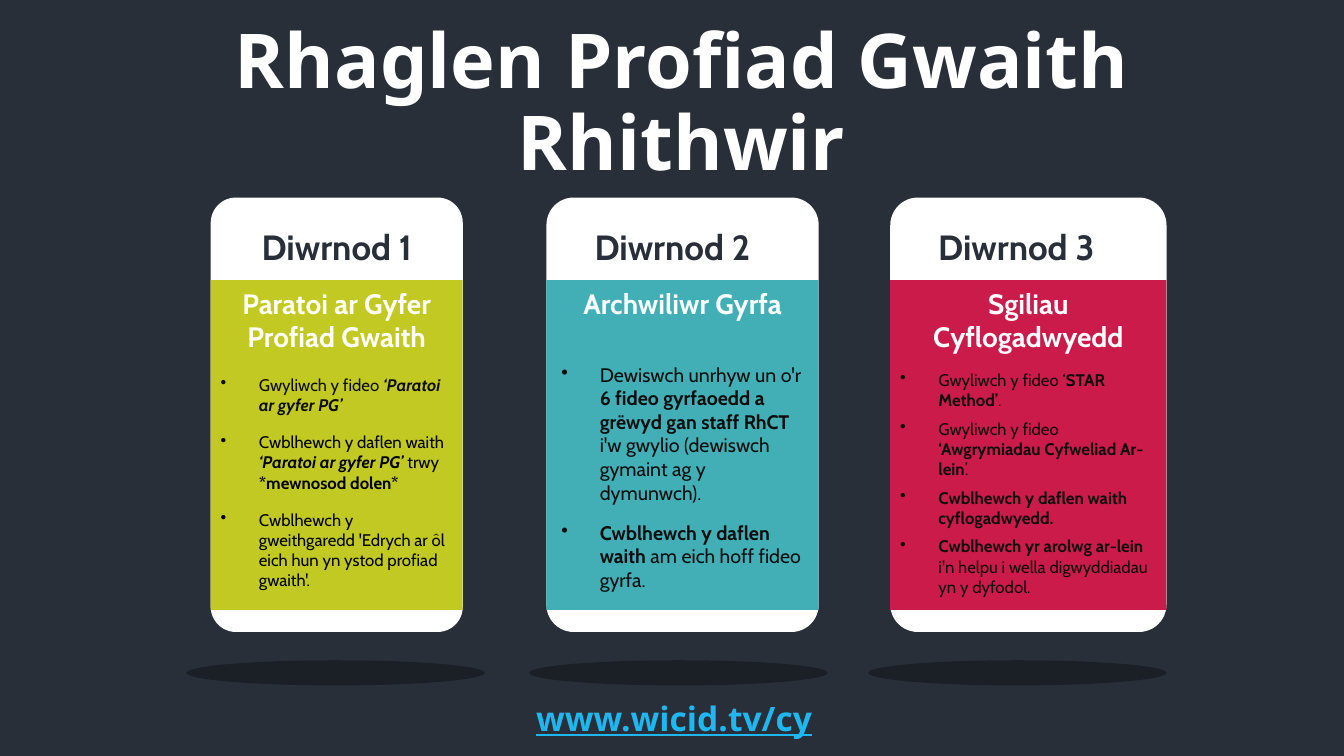
import pptx
import pptx.dml.color
import pptx.enum.shapes
import pptx.enum.text
import pptx.oxml
import pptx.oxml.ns
import pptx.util
import lxml.etree

Inches = pptx.util.Inches
Pt = pptx.util.Pt
SHAPE = pptx.enum.shapes.MSO_SHAPE
CENTER = pptx.enum.text.PP_ALIGN.CENTER
LEFT = pptx.enum.text.PP_ALIGN.LEFT

DARK, WHITE, INK, BLACK = "282F39", "FFFFFF", "0D0D0D", "000000"
BOLD = {"bold": True}
BOLD_ITALIC = {"bold": True, "italic": True}
PLAIN = {}


def colour(hex_value):
    return pptx.dml.color.RGBColor.from_string(hex_value)


class Deck:
    body_font = "Cabin"
    title_font = "Noto Sans"

    def __init__(self, width, height):
        self.prs = pptx.Presentation()
        self.prs.slide_width = Inches(width)
        self.prs.slide_height = Inches(height)
        self.slide = self.prs.slides.add_slide(self.prs.slide_layouts[5])
        self.slide.background.fill.solid()
        self.slide.background.fill.fore_color.rgb = colour(DARK)

    def run(self, paragraph, text, ink, **formats):
        run = paragraph.add_run()
        run.text = text
        for name, value in formats.items():
            setattr(run.font, name, value)
        run.font.color.rgb = colour(ink)

    def title(self, text, box, size):
        title = self.slide.shapes.title
        for name, value in zip(("left", "top", "width", "height"), box):
            setattr(title, name, Inches(value))
        frame = title.text_frame
        frame.word_wrap = True
        frame.auto_size = pptx.enum.text.MSO_AUTO_SIZE.NONE
        paragraph = frame.paragraphs[0]
        paragraph.alignment = CENTER
        paragraph.line_spacing = 0.9
        self.run(paragraph, text, WHITE, name=self.title_font, size=Pt(size), bold=True)

    def shape(self, kind, box, fill, alpha=None, corner=None):
        shape = self.slide.shapes.add_shape(kind, *map(Inches, box))
        shape.shadow.inherit = False
        shape.line.fill.background()
        shape.fill.solid()
        shape.fill.fore_color.rgb = colour(fill)
        if corner is not None:
            shape.adjustments[0] = corner
        if alpha is not None:
            srgb = shape.fill._xPr.find(".//" + pptx.oxml.ns.qn("a:srgbClr"))
            lxml.etree.SubElement(srgb, pptx.oxml.ns.qn("a:alpha"), val=str(alpha * 1000))

    def frame(self, box):
        frame = self.slide.shapes.add_textbox(*map(Inches, box)).text_frame
        frame.word_wrap = True
        return frame

    def label(self, text, box, size, ink, font=None, **formats):
        paragraph = self.frame(box).paragraphs[0]
        paragraph.alignment = CENTER
        self.run(paragraph, text, ink, name=font or self.body_font,
                 size=Pt(size), bold=True, **formats)

    def bullets(self, tasks, box, size, gap):
        frame = self.frame(box)
        for index, (ink, runs) in enumerate(tasks):
            paragraph = frame.add_paragraph() if index else frame.paragraphs[0]
            properties = paragraph._p.get_or_add_pPr()
            properties.set("marL", str(Inches(0.38)))
            properties.set("indent", str(Inches(-0.38)))
            lxml.etree.SubElement(properties, pptx.oxml.ns.qn("a:buChar"), char="•")
            spacing = {"alignment": LEFT, "space_before": Pt(gap if index else 0),
                       "space_after": Pt(gap)}
            for name, value in spacing.items():
                setattr(paragraph, name, value)
            for text, emphasis in runs:
                self.run(paragraph, text, ink, name=self.body_font, size=Pt(size), **emphasis)


DAYS = [
    {"left": 2.09, "width": 2.5, "fill": "C2C923", "shadow_left": 1.85,
     "theme": "Paratoi ar Gyfer Profiad Gwaith",
     "tasks_box": (2.09, 3.67, 2.5, 2.52), "size": 12, "gap": 6,
     "tasks": [
         (INK, [("Gwyliwch y fideo ", PLAIN), ("‘Paratoi ar gyfer PG’", BOLD_ITALIC)]),
         (BLACK, [("Cwblhewch y daflen waith", PLAIN),
                  (" ‘Paratoi ar gyfer PG’ ", BOLD_ITALIC),
                  ("trwy ", PLAIN), ("*mewnosod dolen*", BOLD)]),
         (BLACK, [("Cwblhewch y gweithgaredd 'Edrych ar ôl eich hun yn ystod "
                   "profiad gwaith'.", PLAIN)]),
     ]},
    {"left": 5.42, "width": 2.7, "fill": "42AFB6", "shadow_left": 5.25,
     "theme": "Archwiliwr Gyrfa",
     "tasks_box": (5.47, 3.55, 2.65, 2.56), "size": 14, "gap": 6,
     "tasks": [
         (INK, [("Dewiswch unrhyw un o'r ", PLAIN),
                ("6 fideo gyrfaoedd a grëwyd gan staff RhCT ", BOLD),
                ("i'w gwylio (dewiswch gymaint ag y dymunwch).", PLAIN)]),
         (INK, [("Cwblhewch y daflen waith ", BOLD), ("am eich hoff fideo gyrfa.", PLAIN)]),
     ]},
    {"left": 8.83, "width": 2.74, "fill": "CB1B4A", "shadow_left": 8.61,
     "theme": "Sgiliau Cyflogadwyedd",
     "tasks_box": (8.83, 3.62, 2.74, 2.37), "size": 12, "gap": 3,
     "tasks": [
         (INK, [("Gwyliwch y fideo ‘", PLAIN), ("STAR Method’", BOLD), (".", PLAIN)]),
         (INK, [("Gwyliwch y fideo ", PLAIN),
                ("‘Awgrymiadau Cyfweliad Ar-lein", BOLD), ("’.", PLAIN)]),
         (INK, [("Cwblhewch y daflen waith cyflogadwyedd.", BOLD)]),
         (INK, [("Cwblhewch yr arolwg ar-lein ", BOLD),
                ("i'n helpu i wella digwyddiadau yn y dyfodol.", PLAIN)]),
     ]},
]


def main():
    deck = Deck(13.33, 7.5)
    deck.title("Rhaglen Profiad Gwaith Rhithwir", (1.53, 0.08, 10.46, 1.92), 54)
    for number, day in enumerate(DAYS, 1):
        left, width = day["left"], day["width"]
        theme_left = left + (width - 2.5) / 2
        deck.shape(SHAPE.ROUNDED_RECTANGLE, (left, 1.96, width, 4.31), WHITE, corner=0.1)
        deck.shape(SHAPE.RECTANGLE, (left, 2.78, width, 3.27), day["fill"])
        deck.label(f"Diwrnod {number}", (left, 2.19, 2.5, 0.52), 25, DARK)
        deck.label(day["theme"], (theme_left, 2.79, 2.5, 0.77), 20, WHITE)
        deck.bullets(day["tasks"], day["tasks_box"], day["size"], day["gap"])
        deck.shape(SHAPE.OVAL, (day["shadow_left"], 6.55, 2.96, 0.25), BLACK, alpha=30)
    deck.label("www.wicid.tv/cy", (0.47, 6.87, 12.43, 0.5), 24, "1EB7EF",
               font=deck.title_font, underline=True)
    deck.prs.save("out.pptx")


if __name__ == "__main__":
    main()
